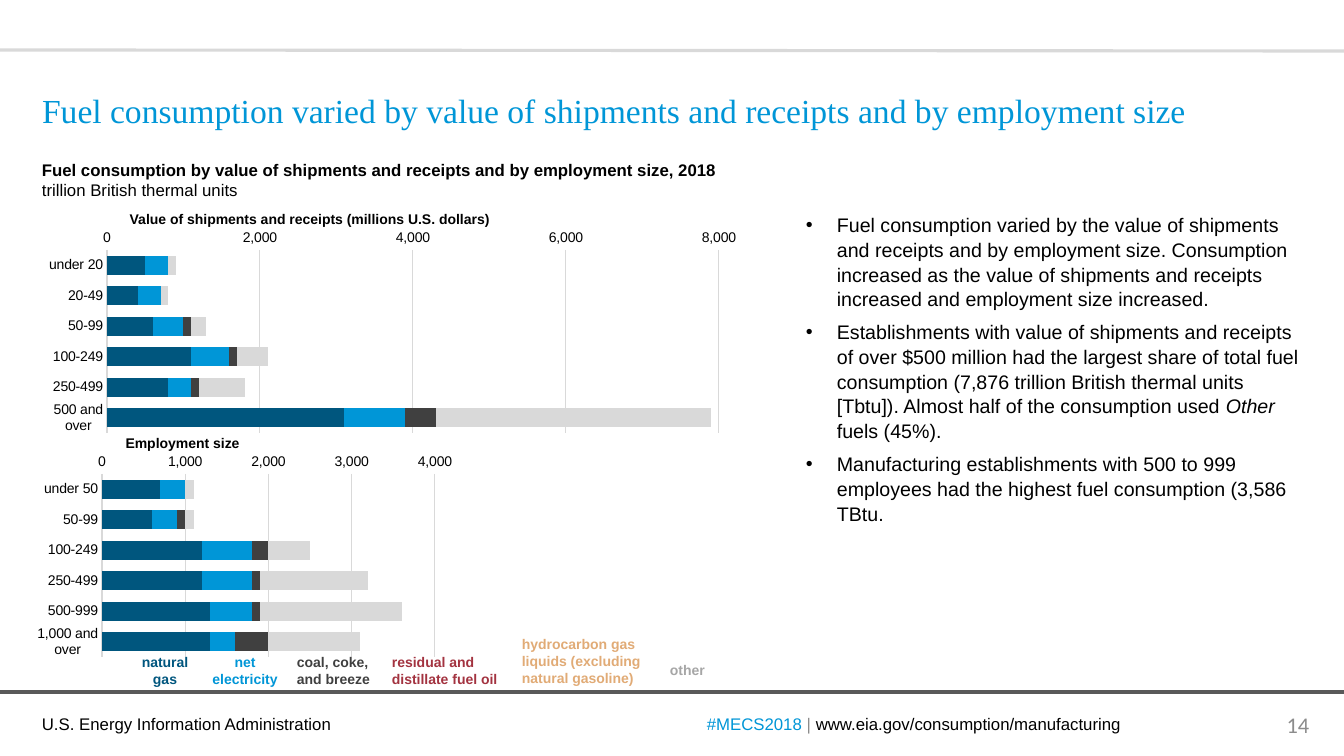
"""Build the slide on fuel consumption by establishment size."""
from lxml.etree import SubElement
from pptx import Presentation
from pptx.chart.data import CategoryChartData
from pptx.dml.color import RGBColor
from pptx.enum.chart import XL_CHART_TYPE, XL_TICK_MARK
from pptx.enum.shapes import MSO_CONNECTOR
from pptx.enum.text import MSO_ANCHOR, PP_ALIGN
from pptx.oxml.ns import qn
from pptx.util import Emu, Pt

COLORS = {
    "black": "000000", "rule": "595959", "grid": "D9D9D9", "muted": "8C8C8C",
    "navy": "00567E", "blue": "0096D7", "charcoal": "404040",
    "red": "A33340", "tan": "E1AB76", "label": "A6A6A6",
}
CENTER = PP_ALIGN.CENTER
FUELS = [
    ("natural gas", "navy"), ("net electricity", "blue"),
    ("coal, coke, and breeze", "charcoal"),
    ("residual and distillate fuel oil", "red"),
    ("hydrocarbon gas liquids", "tan"), ("other", "grid"),
]
LEGEND = [
    (["natural", "gas"], (129, 649, 72, 44), "navy", CENTER, False),
    (["net", "electricity"], (200, 649, 90, 44), "blue", CENTER, True),
    (["coal, coke,", "and breeze"], (287, 649, 96, 44), "charcoal", None, False),
    (["residual and", "distillate fuel oil"], (382, 649, 131, 44), "red", None, False),
    (["hydrocarbon gas liquids (excluding", "natural gasoline)"],
     (512, 631, 147, 61), "tan", None, True),
    (["other"], (660, 657, 81, 27), "label", None, True),
]
SHIPMENT_SIZES = ["under 20", "20-49", "50-99", "100-249", "250-499", "500 and over"]
SHIPMENT_VALUES = [
    [500, 400, 600, 1100, 800, 3100], [300, 300, 400, 500, 300, 800],
    [0, 0, 100, 100, 100, 400], [0] * 6, [0] * 6,
    [100, 100, 200, 400, 600, 3600],
]
EMPLOYMENT_SIZES = ["under 50", "50-99", "100-249", "250-499", "500-999", "1,000 and over"]
EMPLOYMENT_VALUES = [
    [700, 600, 1200, 1200, 1300, 1300], [300, 300, 600, 600, 500, 300],
    [0, 100, 200, 100, 100, 400], [0] * 6, [0] * 6,
    [100, 100, 500, 1300, 1700, 1100],
]
FINDINGS = [
    ["Fuel consumption varied by the value of shipments and receipts and by "
     "employment size. Consumption increased as the value of shipments and "
     "receipts increased and employment size increased."],
    ["Establishments with value of shipments and receipts of over $500 million "
     "had the largest share of total fuel consumption (7,876 trillion British "
     "thermal units [Tbtu]). Almost half of the consumption used ",
     ("Other", {"italic": True}), " fuels (45%)."],
    ["Manufacturing establishments with 500 to 999 employees had the highest "
     "fuel consumption (3,586 TBtu."],
]


def px(length):
    """Turn pixels into EMU."""
    return Emu(round(length * 914400 / 100.8))


def format_font(font, size=12, color="black", bold=False, italic=False, name="Arial"):
    """Apply a complete character format."""
    font.name, font.size = name, Pt(size)
    font.bold, font.italic = bold, italic
    font.color.rgb = RGBColor.from_string(COLORS[color])


def write(paragraph, text, align=None, **style):
    """Add a text, or a list of texts with own formats, to a paragraph."""
    paragraph.alignment = align
    for part in [text] if isinstance(text, str) else text:
        words, changes = (part, {}) if isinstance(part, str) else part
        run = paragraph.add_run()
        run.text = words
        format_font(run.font, **{**style, **changes})


class SlideBuilder:
    """Hold the slide and draw its kinds of element in one style."""

    def __init__(self, slide):
        """Keep the slide."""
        self.slide = slide

    def title(self, text, box):
        """Place and format the title placeholder."""
        title = self.slide.shapes.title
        title.left, title.top, title.width, title.height = map(px, box)
        title.text_frame.vertical_anchor = MSO_ANCHOR.BOTTOM
        write(title.text_frame.paragraphs[0], text, PP_ALIGN.LEFT,
              size=24, color="blue", name="Times New Roman")

    def text(self, lines, box, anchor=MSO_ANCHOR.TOP, wrap=True, **style):
        """Add a text box with one paragraph for each line."""
        frame = self.slide.shapes.add_textbox(*map(px, box)).text_frame
        frame.word_wrap, frame.vertical_anchor = wrap, anchor
        for index, line in enumerate(lines):
            paragraph = frame.add_paragraph() if index else frame.paragraphs[0]
            write(paragraph, line, **style)
        return frame

    def bullets(self, items, box, **style):
        """Add a bulleted list."""
        for paragraph in self.text(items, box, **style).paragraphs:
            paragraph.space_after = Pt(6)
            paragraph.line_spacing = 1.05
            properties = paragraph._p.get_or_add_pPr()
            properties.set("marL", str(px(31)))
            properties.set("indent", str(-px(31)))
            SubElement(properties, qn("a:buFont"), typeface="Arial")
            SubElement(properties, qn("a:buChar"), char="•")

    def rule(self, start_y, end_y, color):
        """Draw a line across the slide."""
        line = self.slide.shapes.add_connector(
            MSO_CONNECTOR.STRAIGHT, px(0), px(start_y), px(1344), px(end_y))
        line.line.color.rgb = RGBColor.from_string(COLORS[color])
        line.line.width = Pt(2.25)
        SubElement(line._element.spPr, qn("a:effectLst"))

    def chart(self, categories, values, box, plot_box, maximum, step):
        """Add a stacked bar chart whose inner plot fills plot_box."""
        data = CategoryChartData(number_format="#,##0")
        data.categories = categories
        for (fuel, _), amounts in zip(FUELS, values):
            data.add_series(fuel, amounts)
        chart = self.slide.shapes.add_chart(
            XL_CHART_TYPE.BAR_STACKED, *map(px, box), data).chart
        chart.has_legend = chart.has_title = False
        format_font(chart.font, size=10, name="Calibri")
        plot = chart.plots[0]
        plot.gap_width, plot.overlap, plot.vary_by_categories = 60, 100, False
        for series, (_, color) in zip(plot.series, FUELS):
            series.format.fill.solid()
            series.format.fill.fore_color.rgb = RGBColor.from_string(COLORS[color])
        category_axis, value_axis = chart.category_axis, chart.value_axis
        for axis in (category_axis, value_axis):
            axis.major_tick_mark = axis.minor_tick_mark = XL_TICK_MARK.NONE
            format_font(axis.tick_labels.font, size=10)
        category_axis.reverse_order = True
        value_axis.minimum_scale, value_axis.maximum_scale = 0, maximum
        value_axis.major_unit = step
        value_axis.has_major_gridlines = True
        value_axis.tick_labels.number_format = "#,##0"
        value_axis.tick_labels.number_format_is_linked = False
        value_axis.format.line.fill.background()
        for line in (category_axis.format.line, value_axis.major_gridlines.format.line):
            line.color.rgb = RGBColor.from_string(COLORS["grid"])
            line.width = Pt(0.75)
        self.place_plot(chart, box, plot_box)

    def place_plot(self, chart, box, plot_box):
        """Fix the inner plot area inside the chart."""
        area = chart._chartSpace.chart.plotArea
        for layout in area.findall(qn("c:layout")):
            area.remove(layout)
        layout = SubElement(area, qn("c:layout"))
        area.insert(0, layout)
        manual = SubElement(layout, qn("c:manualLayout"))
        left, top, width, height = box
        plot_left, plot_top, plot_width, plot_height = plot_box
        settings = {
            "layoutTarget": "inner", "xMode": "edge", "yMode": "edge",
            "x": (plot_left - left) / width, "y": (plot_top - top) / height,
            "w": plot_width / width, "h": plot_height / height,
        }
        for tag, value in settings.items():
            SubElement(manual, qn(f"c:{tag}"), val=str(value))


def main():
    """Build and save the presentation."""
    presentation = Presentation()
    presentation.slide_width, presentation.slide_height = px(1344), px(756)
    builder = SlideBuilder(presentation.slides.add_slide(presentation.slide_layouts[5]))
    builder.rule(692, 692, "rule")
    builder.text(["U.S. Energy Information Administration"], (32, 709, 373, 30))
    builder.rule(50, 51, "grid")
    builder.title("Fuel consumption varied by value of shipments and receipts "
                  "and by employment size", (32, 51, 1279, 84))
    builder.text([[("#MECS2018 ", {"color": "blue"}), ("| ", {"color": "muted"}),
                   "www.eia.gov/consumption/manufacturing"]],
                 (687, 704, 454, 40), MSO_ANCHOR.MIDDLE, align=CENTER)
    builder.text(["14"], (1268, 705, 60, 40), MSO_ANCHOR.MIDDLE, align=CENTER,
                 size=16, color="muted", name="Calibri")
    builder.text([[("Fuel consumption by value of shipments and receipts and by "
                    "employment size, 2018", {"bold": True})],
                  "trillion British thermal units"], (32, 155, 718, 50))
    builder.chart(SHIPMENT_SIZES, SHIPMENT_VALUES, (35, 226, 716, 212),
                  (107, 250, 612, 183), 8000, 2000)
    builder.chart(EMPLOYMENT_SIZES, EMPLOYMENT_VALUES, (29, 451, 431, 212),
                  (102, 474, 333, 183), 4000, 1000)
    for heading, box in (
        ("Employment size", (107, 430, 151, 27)),
        ("Value of shipments and receipts (millions U.S. dollars)", (107, 206, 405, 27)),
    ):
        builder.text([heading], box, align=CENTER, size=10, bold=True)
    for lines, box, color, align, wrap in LEGEND:
        builder.text(lines, box, wrap=wrap, align=align, size=10, color=color, bold=True)
    builder.bullets(FINDINGS, (796, 207, 514, 345), size=14)
    presentation.save("out.pptx")


if __name__ == "__main__":
    main()
